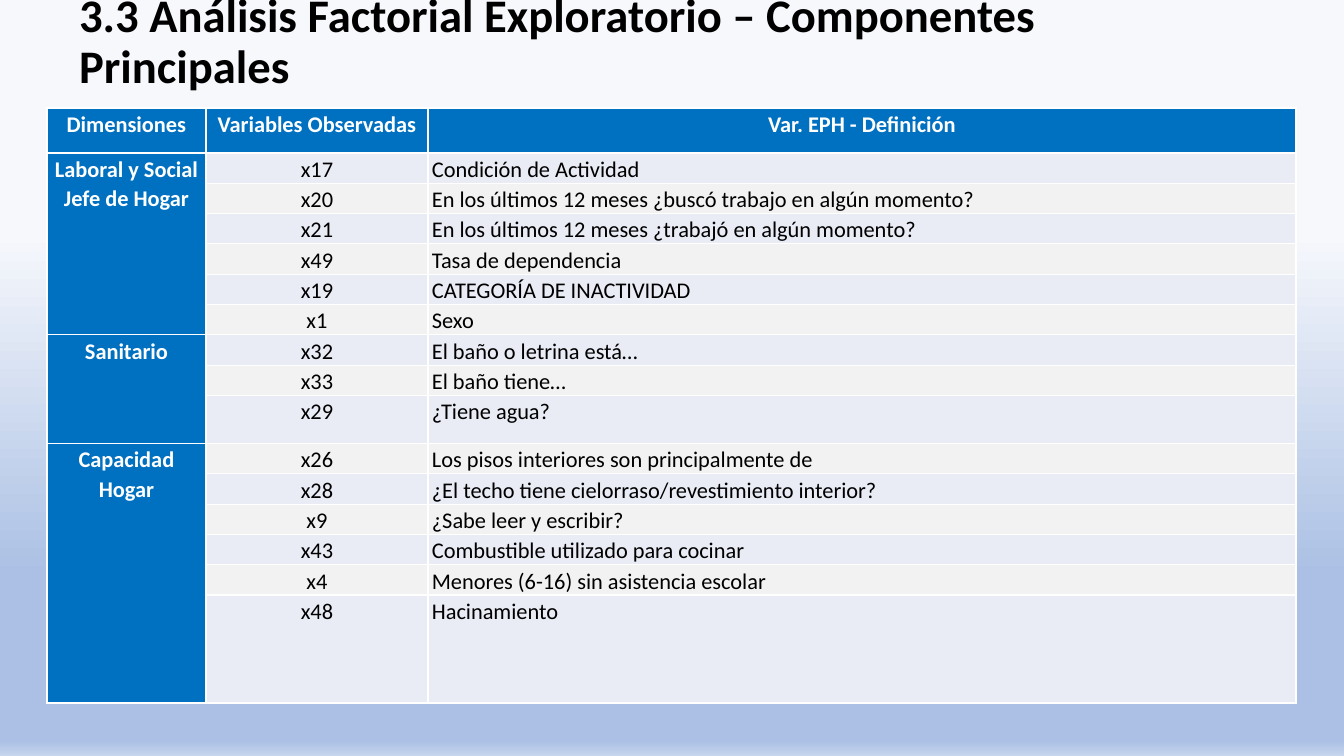
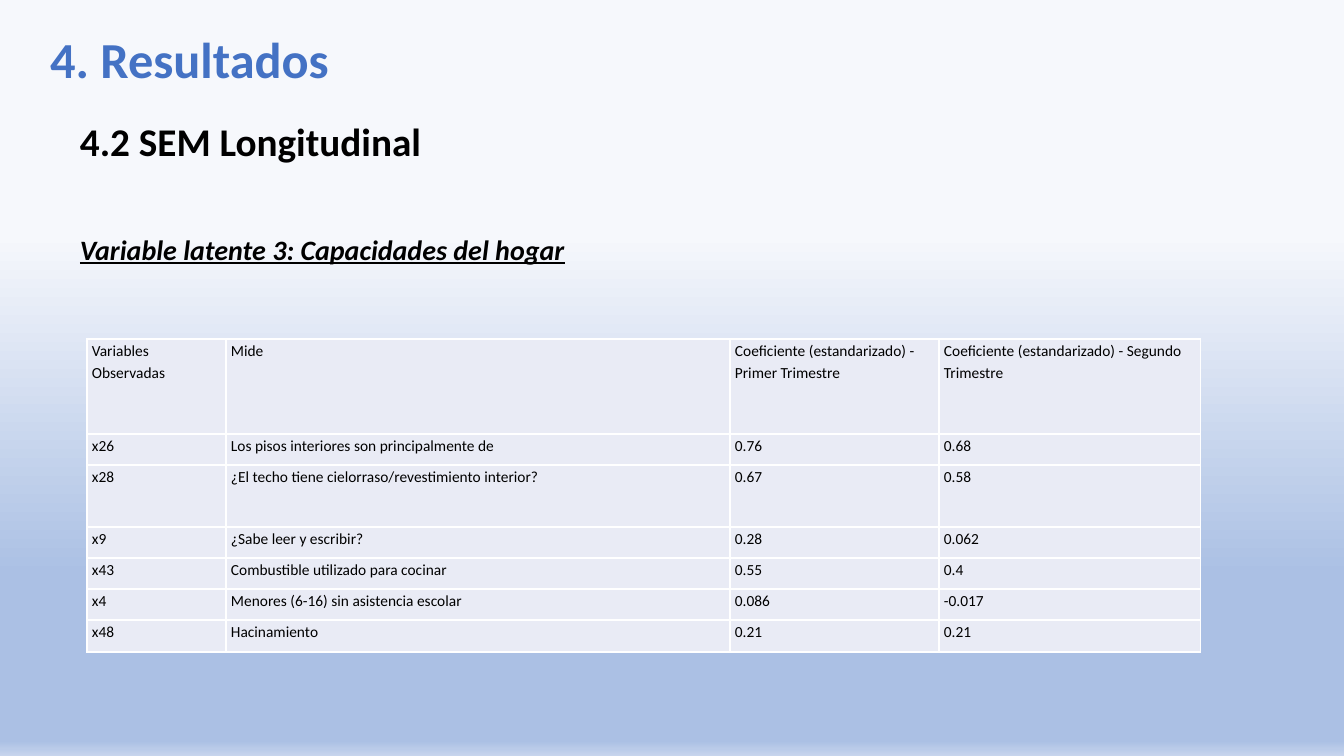
from dataclasses import dataclass

from lxml import etree
from pptx import Presentation
from pptx.dml.color import RGBColor
from pptx.enum.text import MSO_ANCHOR, MSO_AUTO_SIZE, PP_ALIGN
from pptx.oxml.ns import qn
from pptx.util import Emu, Pt

LEFT, MID, JUST = PP_ALIGN.LEFT, PP_ALIGN.CENTER, PP_ALIGN.JUSTIFY
CENTRE, TOP = MSO_ANCHOR.MIDDLE, MSO_ANCHOR.TOP
FIXED = MSO_AUTO_SIZE.NONE


@dataclass(frozen=True)
class Theme:
    font: str = "Calibri"
    black: str = "000000"
    white: str = "FFFFFF"
    blue: str = "4472C4"
    head: str = "0070C0"
    pale: str = "E9EBF5"
    grey: str = "F2F2F2"
    sky: tuple = ((31, "F6F8FC"), (76, "ABC0E4"), (98, "ABC0E4"), (100, "C7D5ED"))
    long: float = 33.3
    main: int = 36
    sub: int = 28
    note: int = 20
    body: int = 16
    small: int = 11


@dataclass(frozen=True)
class Look:
    """Text size, line spacing, space after and insets of a table."""
    size: int
    lead: float
    after: int
    side: int
    top: int


THEME = Theme()
WIDE = Look(THEME.body, 1.07, 8, 4, 1)
TIGHT = Look(THEME.small, 1.15, 0, 5, 0)

HEADS = ("Dimensiones", "Variables Observadas", "Var. EPH - Definición")
HOME = (
    ("x26", "Los pisos interiores son principalmente de"),
    ("x28", "¿El techo tiene cielorraso/revestimiento interior?"),
    ("x9", "¿Sabe leer y escribir?"),
    ("x43", "Combustible utilizado para cocinar"),
    ("x4", "Menores (6-16) sin asistencia escolar"),
    ("x48", "Hacinamiento"),
)
GROUPS = (
    ("Laboral y Social Jefe de Hogar", (
        ("x17", "Condición de Actividad"),
        ("x20", "En los últimos 12 meses ¿buscó trabajo en algún momento?"),
        ("x21", "En los últimos 12 meses ¿trabajó en algún momento?"),
        ("x49", "Tasa de dependencia"),
        ("x19", "CATEGORÍA DE INACTIVIDAD"),
        ("x1", "Sexo"),
    )),
    ("Sanitario", (
        ("x32", "El baño o letrina está…"),
        ("x33", "El baño tiene…"),
        ("x29", "¿Tiene agua?"),
    )),
    ("Capacidad Hogar", HOME),
)
TERMS = ("Variables Observadas", "Mide",
         "Coeficiente (estandarizado) - Primer Trimestre",
         "Coeficiente (estandarizado) - Segundo Trimestre")
COEFS = (("0.76", "0.68"), ("0.67", "0.58"), ("0.28", "0.062"),
         ("0.55", "0.4"), ("0.086", "-0.017"), ("0.21", "0.21"))


def px(n):
    return Emu(round(n * 914400 / 100.8))


def style(para, size, color=THEME.black, bold=False, align=LEFT, lead=1.0, after=0):
    para.alignment, para.line_spacing = align, lead
    para.space_before, para.space_after = Pt(0), Pt(after)
    for run in para.runs:
        font = run.font
        font.name, font.size, font.bold = THEME.font, Pt(size), bold
        font.color.rgb = RGBColor.from_string(color)


def place(shape, box):
    shape.left, shape.top, shape.width, shape.height = map(px, box)


# Shared backdrop and titles
def backdrop(master):
    fill = master.background.fill
    fill.gradient()
    fill.gradient_angle = 270
    stops = master.element.find(".//" + qn("a:gsLst"))
    for stop in list(stops):
        stops.remove(stop)
    for pos, color in THEME.sky:
        stop = etree.SubElement(stops, qn("a:gs"), pos=str(pos * 1000))
        etree.SubElement(stop, qn("a:srgbClr"), val=color)


def titled(deck, text, box, size, color):
    slide = deck.slides.add_slide(deck.slide_layouts[5])
    title = slide.shapes.title
    place(title, box)
    frame = title.text_frame
    frame.text = text
    frame.word_wrap, frame.auto_size = True, FIXED
    frame.vertical_anchor = CENTRE
    style(frame.paragraphs[0], size, color, True, lead=0.9)
    return slide


# Tables
def grid(slide, left, top, cols, rows):
    frame = slide.shapes.add_table(len(rows), len(cols), px(left), px(top),
                                   px(sum(cols)), px(sum(rows)))
    table = frame.table
    table.first_row = table.horz_banding = False
    for col, width in zip(table.columns, cols):
        col.width = px(width)
    for row, height in zip(table.rows, rows):
        row.height = px(height)
    return table


def border(cell):
    props = cell._tc.get_or_add_tcPr()
    for side in ("a:lnL", "a:lnR", "a:lnT", "a:lnB"):
        line = etree.SubElement(props, qn(side), w=str(Pt(1)))
        fill = etree.SubElement(line, qn("a:solidFill"))
        etree.SubElement(fill, qn("a:srgbClr"), val=THEME.white)


def put(cell, text, look, fill, color=THEME.black, bold=False, align=LEFT):
    border(cell)
    cell.fill.solid()
    cell.fill.fore_color.rgb = RGBColor.from_string(fill)
    cell.margin_left = cell.margin_right = px(look.side)
    cell.margin_top, cell.margin_bottom = px(look.top), 0
    cell.vertical_anchor = TOP
    cell.text_frame.text = text
    style(cell.text_frame.paragraphs[0], look.size, color, bold, align,
          look.lead, look.after)


def label(cell, text):
    put(cell, text, WIDE, THEME.head, THEME.white, True, MID)


def factors(slide, left, top):
    rows = [45] + [30] * 8 + [48] + [30] * 5 + [108]
    table = grid(slide, left, top, (159, 222, 868), rows)
    for col, text in enumerate(HEADS):
        label(table.cell(0, col), text)
    row = 1
    for name, items in GROUPS:
        first = row
        for code, text in items:
            fill = THEME.pale if row % 2 else THEME.grey
            label(table.cell(row, 0), name if row == first else "")
            put(table.cell(row, 1), code, WIDE, fill, align=MID)
            put(table.cell(row, 2), text, WIDE, fill)
            row += 1
        table.cell(first, 0).merge(table.cell(row - 1, 0))


def results(slide, left, top):
    table = grid(slide, left, top, (139, 504, 209, 262),
                 (95, 31, 62, 31, 31, 31, 32))
    lines = [TERMS] + [item + pair for item, pair in zip(HOME, COEFS)]
    for row, line in enumerate(lines):
        for col, text in enumerate(line):
            put(table.cell(row, col), text, TIGHT, THEME.pale)


# Section headings above the results
def heading(slide, box):
    shape = slide.shapes.add_textbox(*map(px, box))
    frame = shape.text_frame
    frame.word_wrap, frame.auto_size = True, FIXED
    frame.margin_left = px(40)
    frame.text = "4.2 SEM Longitudinal\nVariable latente 3: Capacidades del hogar"
    sub, note = frame.paragraphs
    style(sub, THEME.sub, bold=True, align=JUST, lead=1.15, after=45)
    style(note, THEME.note, bold=True, align=JUST, lead=1.15, after=10)
    font = note.runs[0].font
    font.italic = font.underline = True


def main():
    deck = Presentation()
    deck.slide_width, deck.slide_height = px(1344), px(756)
    backdrop(deck.slide_master)

    slide = titled(deck, "3.3 Análisis Factorial Exploratorio – Componentes Principales",
                   (69, 0, 1159, 86), THEME.long, THEME.black)
    factors(slide, 47, 108)

    slide = titled(deck, "4. Resultados", (40, 19, 1159, 86), THEME.main, THEME.blue)
    heading(slide, (40, 105, 1262, 241))
    results(slide, 87, 339)

    deck.save("out.pptx")


if __name__ == "__main__":
    main()
